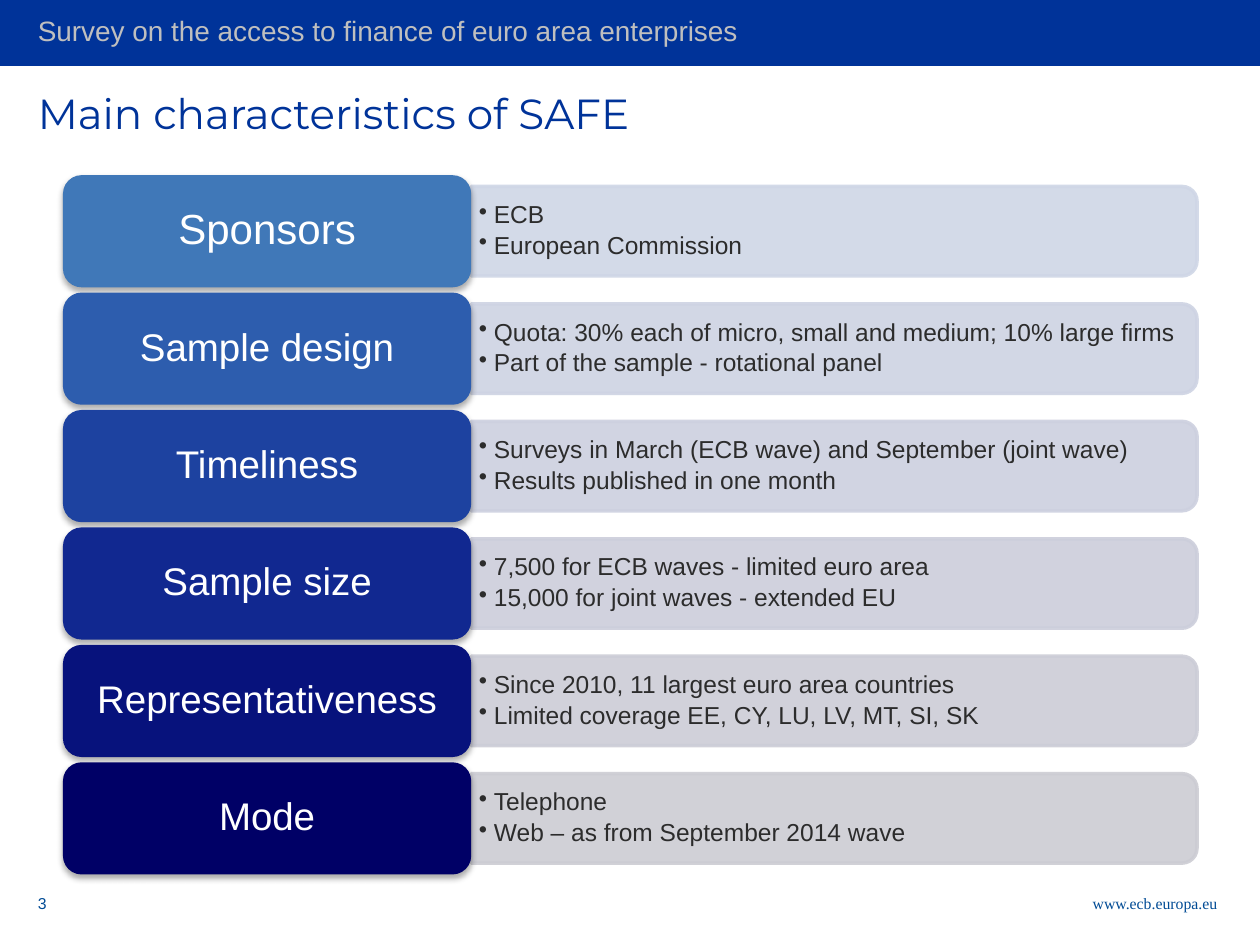
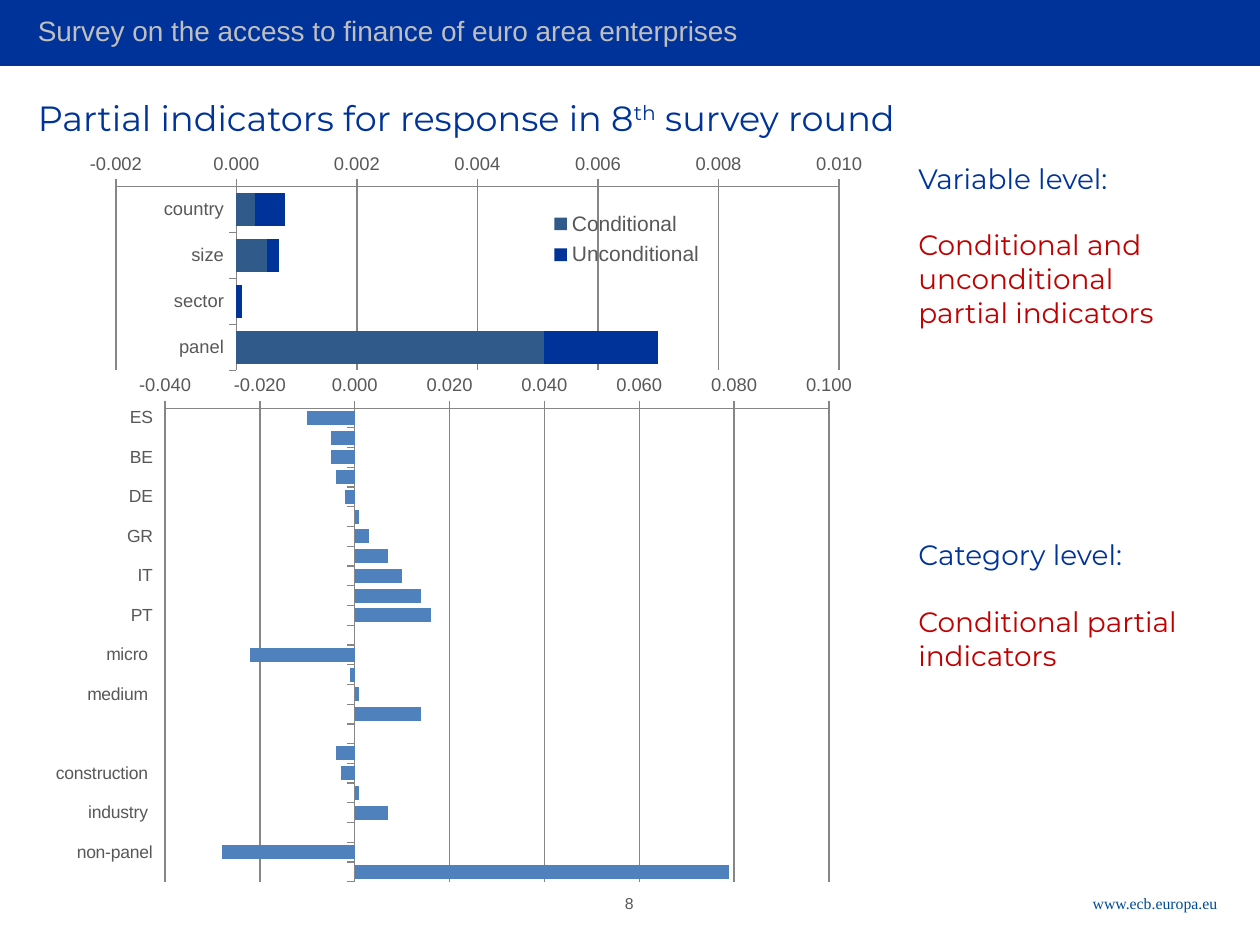
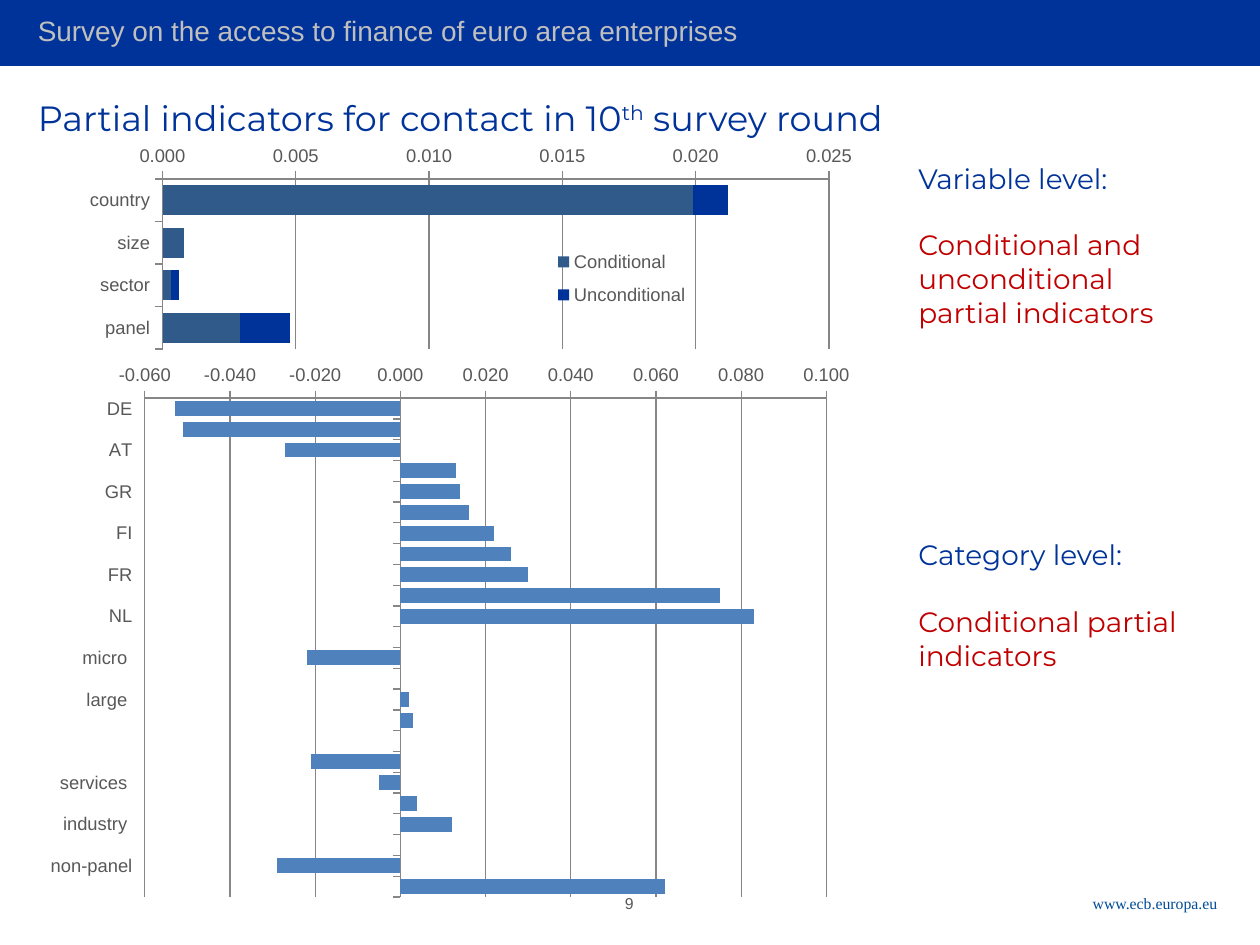
from dataclasses import dataclass

from lxml.etree import SubElement
from pptx import Presentation
from pptx.chart.data import CategoryChartData
from pptx.dml.color import RGBColor
from pptx.enum.chart import XL_CHART_TYPE, XL_LEGEND_POSITION, XL_TICK_LABEL_POSITION, XL_TICK_MARK
from pptx.enum.shapes import MSO_SHAPE
from pptx.enum.text import MSO_ANCHOR, MSO_AUTO_SIZE, PP_ALIGN
from pptx.oxml import parse_xml
from pptx.oxml.ns import nsdecls, qn
from pptx.util import Inches, Pt


@dataclass(frozen=True)
class Theme:
    """Colours, fonts and type sizes of the deck."""

    blue: str = "003399"
    red: str = "C00000"
    link: str = "004B95"
    tagline: str = "BFBFBF"
    ink: str = "2C2C2C"
    white: str = "FFFFFF"
    grey: str = "585858"
    grid: str = "868686"
    conditional: str = "305A8A"
    category: str = "4F81BD"
    body_font: str = "Arial"
    head_font: str = "Montserrat"
    link_font: str = "Times New Roman"
    title: float = 24
    long_title: float = 20
    note: float = 16
    detail: float = 14
    label: float = 22
    first_label: float = 24
    footer: float = 9
    chart: float = 10.5


THEME = Theme()

CHARACTERISTICS = [
    ("Sponsors", "4078B8", "CFD6E6", ["ECB", "European Commission"]),
    ("Sample design", "2D5DAE", "CED3E3",
     ["Quota: 30% each of micro, small and medium; 10% large firms",
      "Part of the sample - rotational panel"]),
    ("Timeliness", "1D42A0", "CDD0DF",
     ["Surveys in March (ECB wave) and September (joint wave)", "Results published in one month"]),
    ("Sample size", "112890", "CCCEDB",
     ["7,500 for ECB waves - limited euro area", "15,000 for joint waves - extended EU"]),
    ("Representativeness", "07127C", "CCCDD7",
     ["Since 2010, 11 largest euro area countries", "Limited coverage EE, CY, LU, LV, MT, SI, SK"]),
    ("Mode", "000066", "CCCCD3", ["Telephone", "Web – as from September 2014 wave"]),
]

VARIABLES = ["country", "size", "sector", "panel"]

RESPONSE = {
    "title": ("Partial indicators for response in 8", "th", " survey round"),
    "page": "8",
    "variable": {
        "box": (0.59, 1.18, 6.38, 1.8), "plot": (0.92, 1.48, 5.74, 1.46),
        "scale": (-0.002, 0.01, 0.002), "categories": VARIABLES,
        "legend": (4.3, 1.62, 1.35, 0.56), "legend_size": 12,
        "legend_position": XL_LEGEND_POSITION.TOP,
        "series": [("Unconditional", [0.0008, 0.0007, 0.0001, 0.007], THEME.blue),
                   ("Conditional", [0.0003, 0.0005, 0, 0.0051], THEME.conditional)],
    },
    "category": {
        "box": (0.35, 2.88, 6.6, 4.31), "plot": (1.31, 3.24, 5.27, 3.76),
        "scale": (-0.04, 0.1, 0.02), "label_size": 10,
        "categories": ["ES", "NL", "BE", "AT", "DE", "FI", "GR", "FR", "IT", "IE", "PT", "",
                       "micro ", "large ", "medium ", "small ", "", "services ",
                       "construction ", "trade ", "industry ", "", "non-panel", "panel"],
        "series": [("Series 1", [
            -0.01, -0.005, -0.005, -0.004, -0.002, 0.001, 0.003, 0.007, 0.01, 0.014, 0.016, None,
            -0.022, -0.001, 0.001, 0.014, None, -0.004, -0.003, 0.001, 0.007, None,
            -0.028, 0.079], THEME.category)],
    },
}

CONTACT = {
    "title": ("Partial indicators for contact in 10", "th", " survey round"),
    "page": "9",
    "variable": {
        "box": (0.59, 1.12, 6.3, 1.68), "plot": (1.29, 1.42, 5.29, 1.35),
        "scale": (0, 0.025, 0.005), "categories": VARIABLES,
        "legend": (4.26, 1.9, 1.35, 0.62), "legend_size": THEME.chart,
        "legend_position": XL_LEGEND_POSITION.BOTTOM,
        "series": [("Unconditional", [0.0212, 0.0005, 0.0006, 0.0048], THEME.blue),
                   ("Conditional", [0.0199, 0.0008, 0.0003, 0.0029], THEME.conditional)],
    },
    "category": {
        "box": (0.28, 2.81, 6.6, 4.41), "plot": (1.15, 3.16, 5.41, 3.96),
        "scale": (-0.06, 0.1, 0.02), "label_size": THEME.chart,
        "categories": ["DE", "ES", "AT", "PT", "GR", "IE", "FI", "BE", "FR", "IT", "NL", "",
                       "micro ", "small ", "large ", "medium ", "", "construction ",
                       "services ", "trade ", "industry ", "", "non-panel", "panel"],
        "series": [("Series 1", [
            -0.053, -0.051, -0.027, 0.013, 0.014, 0.016, 0.022, 0.026, 0.03, 0.075, 0.083, None,
            -0.022, 0, 0.002, 0.003, None, -0.021, -0.005, 0.004, 0.012, None,
            -0.029, 0.062], THEME.category)],
    },
}


def inches(box):
    """Turn a box in inches into lengths."""
    return [Inches(length) for length in box]


def style_font(font, size, color, face):
    """Set size, colour and typeface of a font."""
    font.size, font.name = Pt(size), face
    font.color.rgb = RGBColor.from_string(color)


def add_run(paragraph, text, size, color, face=THEME.body_font):
    """Append one formatted run and return it."""
    run = paragraph.add_run()
    run.text = text
    style_font(run.font, size, color, face)
    return run


def set_frame(frame, insets=(0, 0, 0, 0), anchor=MSO_ANCHOR.TOP):
    """Wrap a text frame and set its insets and anchor."""
    frame.word_wrap, frame.auto_size = True, MSO_AUTO_SIZE.NONE
    frame.margin_left, frame.margin_top, frame.margin_right, frame.margin_bottom = inches(insets)
    frame.vertical_anchor = anchor


def add_text(slide, box, insets=(0, 0, 0, 0), anchor=MSO_ANCHOR.TOP):
    """Add a text box and return its frame."""
    frame = slide.shapes.add_textbox(*inches(box)).text_frame
    set_frame(frame, insets, anchor)
    return frame


def add_filled(slide, preset, box, color):
    """Add a flat preset shape."""
    shape = slide.shapes.add_shape(preset, *inches(box))
    shape.shadow.inherit = False
    shape.fill.solid()
    shape.fill.fore_color.rgb = RGBColor.from_string(color)
    shape.line.fill.background()
    return shape


def outline(line, color, width):
    """Give a line its colour and width."""
    line.color.rgb = RGBColor.from_string(color)
    line.width = Pt(width)


def install_frame(layout, slide):
    """Place the band, tagline and web address on the shared layout."""
    band = add_filled(slide, MSO_SHAPE.RECTANGLE, (0, 0, 10, 0.52), THEME.blue)
    outline(band.line, THEME.blue, 0.75)
    tagline = add_text(slide, (0.3, 0.11, 7.11, 0.27))
    add_run(tagline.paragraphs[0], "Survey on the access to finance of euro area enterprises",
            THEME.note, THEME.tagline)
    address = add_text(slide, (7.15, 7.08, 2.51, 0.21)).paragraphs[0]
    address.alignment, address.line_spacing = PP_ALIGN.RIGHT, Pt(12)
    add_run(address, "www.ecb.europa.eu", THEME.footer, THEME.link, THEME.link_font)
    for part in list(slide.shapes)[-3:]:
        layout.shapes._spTree.append(part._element)


def set_title(slide, box, size, parts):
    """Format the title; its second part is raised."""
    title = slide.shapes.title
    title.left, title.top, title.width, title.height = inches(box)
    set_frame(title.text_frame)
    heading = title.text_frame.paragraphs[0]
    heading.alignment, heading.line_spacing = PP_ALIGN.LEFT, Pt(27)
    for index, part in enumerate(parts):
        run = add_run(heading, part, size, THEME.blue, THEME.head_font)
        if index == 1:
            run.font._element.set("baseline", "30000")


def add_page_number(slide, box, number, color, alignment):
    """Write the page number."""
    page = add_text(slide, box).paragraphs[0]
    page.alignment, page.line_spacing = alignment, Pt(12)
    add_run(page, number, THEME.footer, color)


def add_translucency(shape):
    """Make fill and line of a shape 90% opaque."""
    for color in shape._element.spPr.iter(qn("a:srgbClr")):
        SubElement(color, qn("a:alpha")).set("val", "90000")


def add_soft_shadow(shape):
    """Drop a soft shadow below a shape."""
    effects = shape._element.spPr.find(qn("a:effectLst"))
    effects.append(parse_xml(
        f'<a:outerShdw {nsdecls("a")} blurRad="{Pt(3.5)}" dist="{Pt(2.2)}" dir="5400000" '
        'rotWithShape="0"><a:srgbClr val="000000"><a:alpha val="32000"/></a:srgbClr>'
        '</a:outerShdw>'))


def add_bullet(paragraph):
    """Give a paragraph a hanging bullet."""
    properties = paragraph._p.get_or_add_pPr()
    properties.set("marL", str(Inches(0.12)))
    properties.set("indent", str(Inches(-0.12)))
    SubElement(properties, qn("a:buChar")).set("char", "•")


def add_characteristic(slide, box, label, label_size, label_color, panel_color, details):
    """Draw one label with its detail panel inside the box."""
    left, top, width, height = box
    label_width, panel_height = 3.24, 0.71
    panel_left, panel_width = left + label_width, width - label_width
    middle = top + height / 2
    panel = add_filled(slide, MSO_SHAPE.ROUND_2_SAME_RECTANGLE,
                       (panel_left + (panel_width - panel_height) / 2, middle - panel_width / 2,
                        panel_height, panel_width), panel_color)
    panel.rotation = 90
    outline(panel.line, panel_color, 2)
    add_translucency(panel)

    detail_frame = add_text(slide, (panel_left, middle - 0.32, panel_width - 0.03, 0.64),
                            (0.06, 0.03, 0.06, 0.03), MSO_ANCHOR.MIDDLE)
    for index, detail in enumerate(details):
        line = detail_frame.add_paragraph() if index else detail_frame.paragraphs[0]
        line.line_spacing, line.space_after = 0.9, Pt(2.5)
        add_bullet(line)
        add_run(line, detail, THEME.detail, THEME.ink)

    tile = add_filled(slide, MSO_SHAPE.ROUNDED_RECTANGLE, (left, top, label_width, height),
                      label_color)
    add_soft_shadow(tile)
    set_frame(tile.text_frame, (0.13, 0.09, 0.13, 0.09), MSO_ANCHOR.MIDDLE)
    name = tile.text_frame.paragraphs[0]
    name.alignment, name.line_spacing = PP_ALIGN.CENTER, 0.9
    add_run(name, label, label_size, THEME.white)


def add_characteristics(slide, box):
    """Stack the characteristics evenly in the box."""
    left, top, width, height = box
    row_height = 0.89
    pitch = (height - row_height) / (len(CHARACTERISTICS) - 1)
    for index, (label, label_color, panel_color, details) in enumerate(CHARACTERISTICS):
        size = THEME.label if index else THEME.first_label
        add_characteristic(slide, (left, top + index * pitch, width, row_height),
                           label, size, label_color, panel_color, details)


def manual_layout(box, region, inner=False):
    """Build the chart layout that puts a region at its place in the box."""
    left, top, width, height = box
    fractions = {"x": (region[0] - left) / width, "y": (region[1] - top) / height,
                 "w": region[2] / width, "h": region[3] / height}
    target = '<c:layoutTarget val="inner"/>' if inner else ""
    modes = '<c:xMode val="edge"/><c:yMode val="edge"/>'
    sizes = "".join(f'<c:{key} val="{value:.4f}"/>' for key, value in fractions.items())
    return parse_xml(f'<c:layout {nsdecls("c")}><c:manualLayout>{target}{modes}{sizes}'
                     '</c:manualLayout></c:layout>')


def drop_layout(element):
    """Remove an automatic layout from a chart part."""
    for layout in element.findall(qn("c:layout")):
        element.remove(layout)


def add_legend(chart, content):
    """Lay the legend over the plot."""
    chart.has_legend = True
    legend = chart.legend
    legend.position, legend.include_in_layout = content["legend_position"], True
    style_font(legend.font, content["legend_size"], THEME.grey, THEME.body_font)
    drop_layout(legend._element)
    legend._element.find(qn("c:legendPos")).addnext(
        manual_layout(content["box"], content["legend"]))


def add_indicator_chart(slide, content):
    """Draw a bar chart of partial indicators."""
    data = CategoryChartData(number_format="0.000")
    data.categories = content["categories"]
    for name, values, _ in content["series"]:
        data.add_series(name, values)
    chart = slide.shapes.add_chart(XL_CHART_TYPE.BAR_CLUSTERED, *inches(content["box"]), data).chart
    chart.has_title = chart.has_legend = False
    style_font(chart.font, THEME.chart, THEME.grey, THEME.body_font)

    bars = chart.plots[0]
    bars.gap_width, bars.vary_by_categories = 41, False
    for series, (_, _, color) in zip(bars.series, content["series"]):
        series.invert_if_negative = False
        series.format.fill.solid()
        series.format.fill.fore_color.rgb = RGBColor.from_string(color)

    names, scale = chart.category_axis, chart.value_axis
    for axis in (names, scale):
        axis.major_tick_mark, axis.minor_tick_mark = XL_TICK_MARK.OUTSIDE, XL_TICK_MARK.NONE
        outline(axis.format.line, THEME.grid, 0.75)
    names.reverse_order, names.has_major_gridlines = True, False
    scale.minimum_scale, scale.maximum_scale, scale.major_unit = content["scale"]
    scale.has_major_gridlines = True
    outline(scale.major_gridlines.format.line, THEME.grid, 0.75)
    scale.tick_labels.number_format = "0.000"
    scale.tick_labels.number_format_is_linked = False

    if "legend" in content:
        bars.overlap = 100
        add_legend(chart, content)
    else:
        names.tick_label_position = XL_TICK_LABEL_POSITION.LOW
        style_font(names.tick_labels.font, content["label_size"], THEME.grey, THEME.body_font)
    plot_area = chart._chartSpace.chart.plotArea
    drop_layout(plot_area)
    plot_area.insert(0, manual_layout(content["box"], content["plot"], inner=True))


def add_level_note(slide, box, level, indicators):
    """Write a level heading and its indicators."""
    frame = add_text(slide, box, (0.1, 0.05, 0.1, 0.05))
    add_run(frame.paragraphs[0], level, THEME.note, THEME.blue, THEME.head_font)
    description = frame.add_paragraph()
    description.space_before = Pt(19)
    add_run(description, indicators, THEME.note, THEME.red, THEME.head_font)


def build_characteristics(slide):
    """Build the slide of main characteristics."""
    set_title(slide, (0.3, 0.72, 9.4, 0.69), THEME.title, ["Main characteristics of SAFE"])
    add_characteristics(slide, (0.5, 1.39, 9, 5.55))
    add_page_number(slide, (0.3, 7.08, 3.51, 0.21), "3", THEME.link, PP_ALIGN.LEFT)


def build_indicators(slide, content):
    """Build a slide with variable and category indicators."""
    set_title(slide, (0.3, 0.72, 9.59, 0.51), THEME.long_title, content["title"])
    add_page_number(slide, (4.77, 7.08, 0.45, 0.26), content["page"], THEME.grey, PP_ALIGN.CENTER)
    add_indicator_chart(slide, content["variable"])
    add_level_note(slide, (7.19, 1.23, 2.28, 1.99), "Variable level:",
                   "Conditional and unconditional partial indicators")
    add_level_note(slide, (7.19, 4.22, 2.6, 1.18), "Category level:",
                   "Conditional partial indicators")
    add_indicator_chart(slide, content["category"])


def main():
    """Build and save the deck."""
    deck = Presentation()
    deck.slide_width, deck.slide_height = Inches(10), Inches(7.5)
    layout = deck.slide_layouts[5]
    overview = deck.slides.add_slide(layout)
    install_frame(layout, overview)
    build_characteristics(overview)
    for content in (RESPONSE, CONTACT):
        build_indicators(deck.slides.add_slide(layout), content)
    deck.save("out.pptx")


if __name__ == "__main__":
    main()
